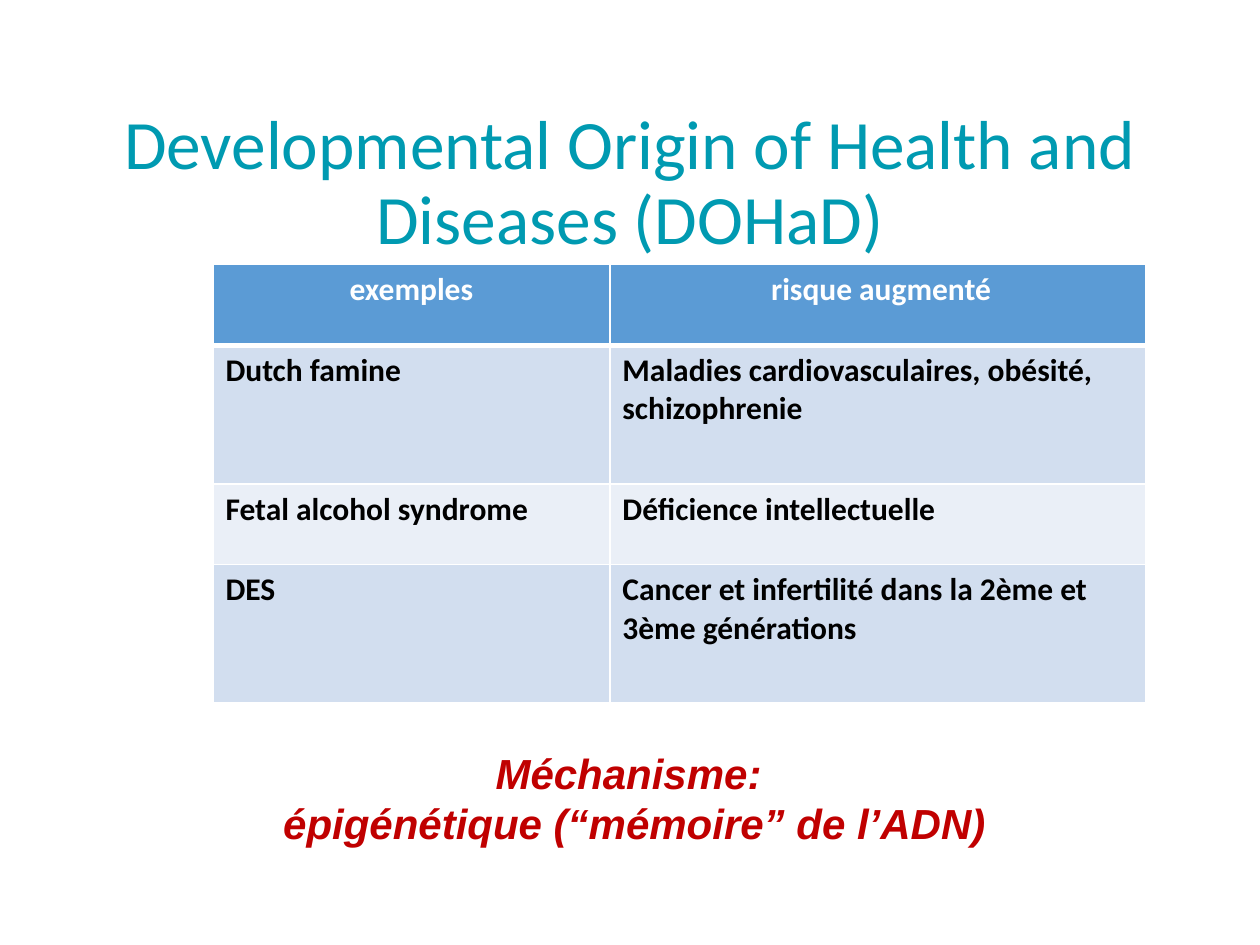
import pptx
import pptx.util
import pptx.dml.color
import pptx.enum.text
import lxml.etree

Pt = pptx.util.Pt
Inch = pptx.util.Inches
RGB = pptx.dml.color.RGBColor
ALIGN = pptx.enum.text.PP_ALIGN
ANCHOR = pptx.enum.text.MSO_ANCHOR
NS = "http://schemas.openxmlformats.org/drawingml/2006/main"

HUES = {"teal": "009AB1", "head": "5B9BD5", "dark": "D2DEEF", "light": "EAEFF7",
        "white": "FFFFFF", "black": "000000", "red": "C00000"}
WIDE, HIGH = 10, 7.5

deck = pptx.Presentation()
deck.slide_width, deck.slide_height = Inch(WIDE), Inch(HIGH)
slide = deck.slides.add_slide(deck.slide_layouts[6])


def place(left, top, width, height):
    return [Inch(WIDE * left), Inch(HIGH * top), Inch(WIDE * width), Inch(HIGH * height)]


def write(frame, lines, look, hue, align, space=1.0):
    frame.word_wrap = True
    for num, line in enumerate(lines):
        para = frame.paragraphs[0] if num == 0 else frame.add_paragraph()
        para.alignment, para.line_spacing = align, space
        run = para.add_run()
        run.text = line
        for key, value in look.items():
            setattr(run.font, key, value)
        run.font.color.rgb = RGB.from_string(HUES[hue])


title = slide.shapes.add_textbox(*place(0.05, 0.112, 0.9, 0.167)).text_frame
title.vertical_anchor = ANCHOR.MIDDLE
write(title, ["Developmental Origin of Health and Diseases (DOHaD)"],
      {"name": "Calibri", "size": Pt(39.6)}, "teal", ALIGN.CENTER, 0.9)

rows = [
    ("exemples", " risque augmenté"),
    ("Dutch famine", "Maladies cardiovasculaires, obésité, schizophrenie"),
    ("Fetal alcohol syndrome", "Déficience intellectuelle"),
    ("DES", "Cancer et infertilité dans la 2ème et 3ème générations"),
]
fills = ["head", "dark", "light", "dark"]
tall = [0.64, 1.1, 0.64, 1.1]
table = slide.shapes.add_table(len(rows), 2, *place(0.169, 0.28, 0.74, 0.46)).table
for col, width in zip(table.columns, [3.15, 4.25]):
    col.width = Inch(width)

for r, texts in enumerate(rows):
    table.rows[r].height = Inch(tall[r])
    for c, text in enumerate(texts):
        cell = table.cell(r, c)
        props = cell._tc.get_or_add_tcPr()
        for side in "LRTB":
            thick = 3 if (r, side) in [(0, "B"), (1, "T")] else 1
            line = lxml.etree.SubElement(props, f"{{{NS}}}ln{side}", w=str(Pt(thick)))
            solid = lxml.etree.SubElement(line, f"{{{NS}}}solidFill")
            lxml.etree.SubElement(solid, f"{{{NS}}}srgbClr", val=HUES["white"])
        cell.fill.solid()
        cell.fill.fore_color.rgb = RGB.from_string(HUES[fills[r]])
        write(cell.text_frame, [text], {"name": "Calibri", "size": Pt(18), "bold": True},
              "black" if r else "white", ALIGN.LEFT if r else ALIGN.CENTER)

note = slide.shapes.add_textbox(*place(0.098, 0.784, 0.811, 0.121)).text_frame
write(note, ["Méchanisme: ", "épigénétique (“mémoire” de l’ADN)"],
      {"name": "Arial", "size": Pt(24), "bold": True, "italic": True}, "red", ALIGN.CENTER)

deck.save("out.pptx")
